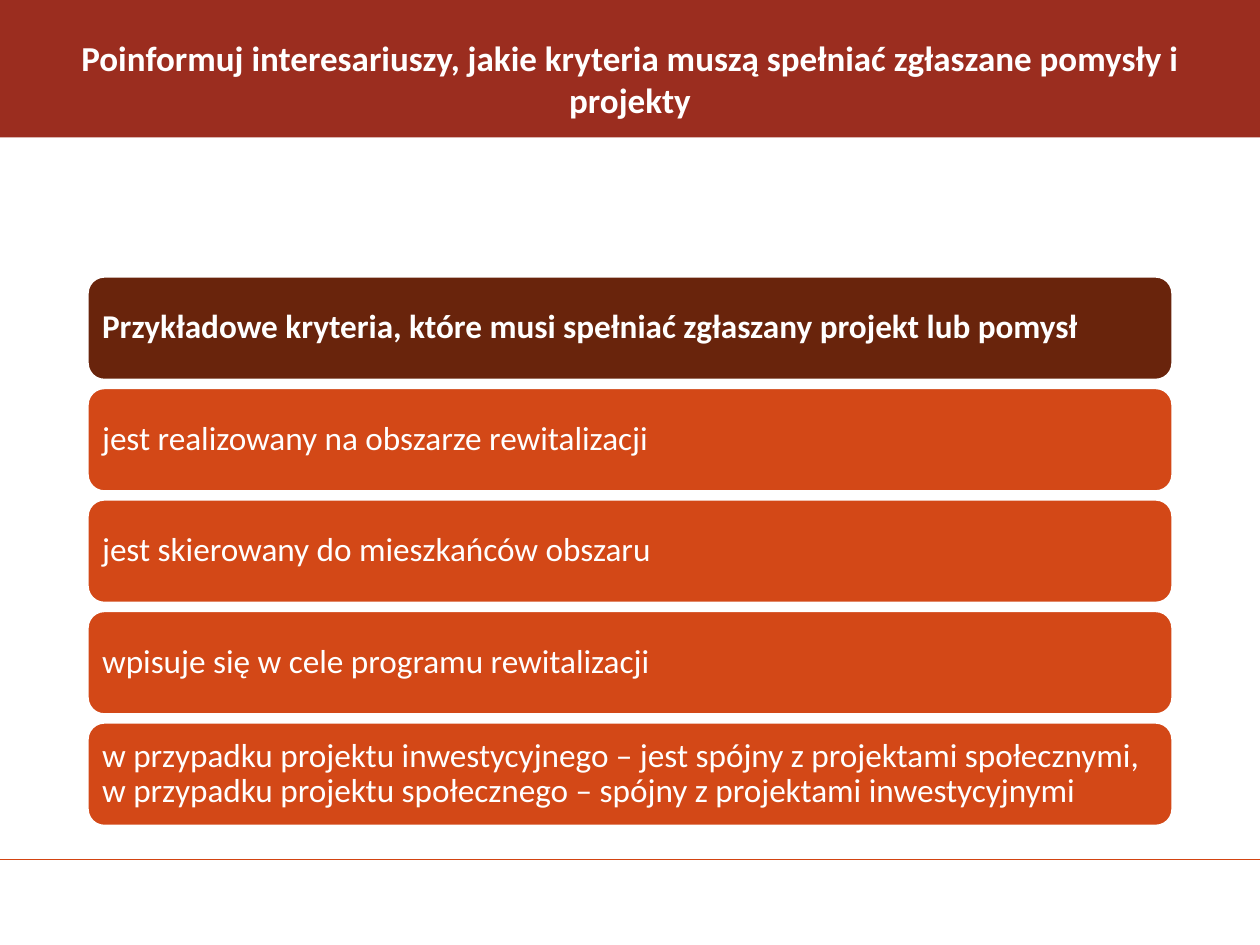
from dataclasses import dataclass

from lxml import etree
from pptx import Presentation
from pptx.dml.color import RGBColor
from pptx.enum.shapes import MSO_CONNECTOR, MSO_SHAPE
from pptx.enum.text import MSO_ANCHOR, PP_ALIGN
from pptx.oxml.ns import qn
from pptx.util import Inches, Pt

STRAIGHT = MSO_CONNECTOR.STRAIGHT
RECTANGLE, ROUNDED = MSO_SHAPE.RECTANGLE, MSO_SHAPE.ROUNDED_RECTANGLE
MIDDLE = MSO_ANCHOR.MIDDLE
LEFT, CENTER = PP_ALIGN.LEFT, PP_ALIGN.CENTER
TITLE_ONLY = 5


@dataclass(frozen=True)
class Theme:
    font: str = "Calibri"
    title_size: Pt = Pt(20)
    bar_size: Pt = Pt(19)
    white: RGBColor = RGBColor(0xFF, 0xFF, 0xFF)
    band: RGBColor = RGBColor(0x9B, 0x2D, 0x1F)
    heading: RGBColor = RGBColor(0x69, 0x24, 0x0C)
    criterion: RGBColor = RGBColor(0xD3, 0x48, 0x17)
    rule: RGBColor = RGBColor(0xD3, 0x44, 0x12)


THEME = Theme()

HEADING = "Przykładowe kryteria, które musi spełniać zgłaszany projekt lub pomysł"
CRITERIA = [
    "jest realizowany na obszarze rewitalizacji",
    "jest skierowany do mieszkańców obszaru",
    "wpisuje się w cele programu rewitalizacji",
    "w przypadku projektu inwestycyjnego – jest spójny z projektami społecznymi, "
    "w przypadku projektu społecznego – spójny z projektami inwestycyjnymi",
]


def write(shape, text, size, bold, align):
    frame = shape.text_frame
    frame.word_wrap = True
    frame.vertical_anchor = MIDDLE
    paragraph = frame.paragraphs[0]
    paragraph.text = text
    paragraph.alignment = align
    paragraph.font.name = THEME.font
    paragraph.font.size = size
    paragraph.font.bold = bold
    paragraph.font.color.rgb = THEME.white
    return frame


def add_block(kind, left, top, width, height, color):
    block = slide.shapes.add_shape(
        kind, Inches(left), Inches(top), Inches(width), Inches(height)
    )
    block.shadow.inherit = False
    block.fill.solid()
    block.fill.fore_color.rgb = color
    return block


prs = Presentation()
prs.slide_width, prs.slide_height = Inches(10), Inches(7.5)
slide = prs.slides.add_slide(prs.slide_layouts[TITLE_ONLY])

# Rule above the footer
footer_rule = slide.shapes.add_connector(
    STRAIGHT, Inches(0), Inches(6.82), Inches(10), Inches(6.82)
)
footer_rule.line.color.rgb = THEME.rule
footer_rule.line.width = Pt(0.75)
etree.SubElement(footer_rule.element.spPr, qn("a:effectLst"))

# Title on its band, with rule and band behind the title
title_band = add_block(RECTANGLE, 0, -0.01, 10, 1.1, THEME.band)
title_band.line.fill.background()

title = slide.shapes.title
title.left, title.top = Inches(0.5), Inches(0)
title.width, title.height = Inches(9), Inches(1.25)
write(
    title,
    "Poinformuj interesariuszy, jakie kryteria muszą spełniać zgłaszane pomysły i projekty",
    THEME.title_size,
    True,
    CENTER,
)
for backdrop in (footer_rule, title_band):
    title.element.addprevious(backdrop.element)

# Heading bar followed by the criteria, at an equal pitch
FIRST_TOP, PITCH = 2.19, 0.885
for row, text in enumerate([HEADING, *CRITERIA]):
    is_heading = row == 0
    color = THEME.heading if is_heading else THEME.criterion
    bar = add_block(ROUNDED, 0.69, FIRST_TOP + row * PITCH, 8.62, 0.83, color)
    bar.line.color.rgb = THEME.white
    bar.line.width = Pt(2)
    frame = write(bar, text, THEME.bar_size, is_heading, LEFT)
    frame.margin_left = frame.margin_right = Inches(0.08)
    frame.margin_top = frame.margin_bottom = Inches(0.08)
    frame.paragraphs[0].line_spacing = 0.9

prs.save("out.pptx")
